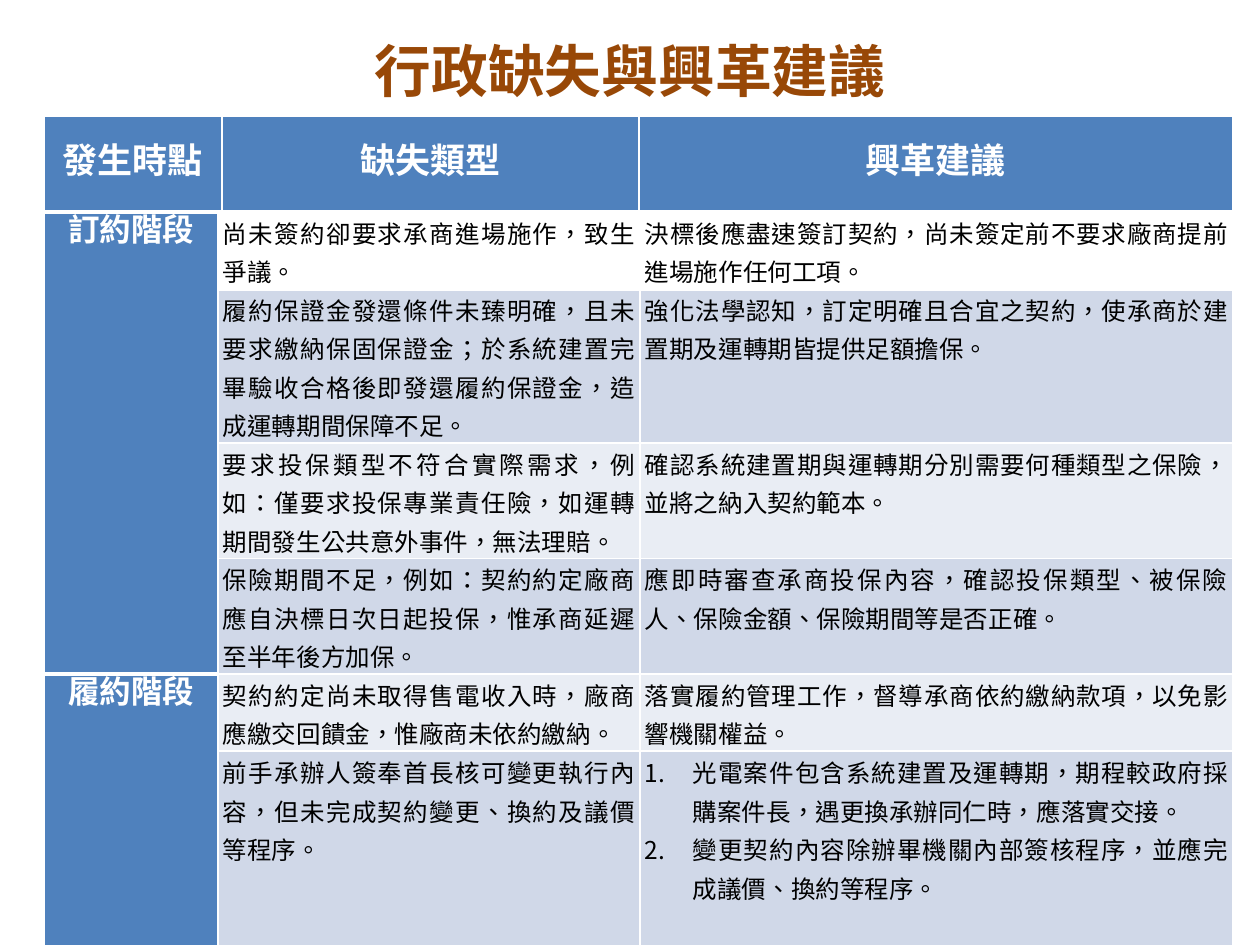
from dataclasses import dataclass

from lxml.etree import SubElement
from pptx import Presentation
from pptx.dml.color import RGBColor
from pptx.enum.text import MSO_ANCHOR, MSO_AUTO_SIZE, PP_ALIGN
from pptx.oxml.ns import qn
from pptx.util import Emu, Inches, Pt


@dataclass(frozen=True)
class Theme:
    font: str = "Noto Sans CJK SC"
    language: str = "zh-TW"
    title_color: str = "984807"
    header_fill: str = "4F81BD"
    white: str = "FFFFFF"
    ink: str = "000000"
    bands: tuple = ("E9EDF4", "D0D8E8")
    title_size: float = 32.4
    header_size: int = 20
    stage_size: int = 18
    body_size: int = 14
    leading: int = 22
    thin: int = 1
    thick: int = 3


def px(length):
    return Emu(round(length * 914400 / 126))


class SlideBuilder:
    def __init__(self, slide, theme):
        self.slide = slide
        self.theme = theme

    def style(self, paragraph, size, color, bold, align):
        paragraph.alignment = align
        # Keep closing punctuation inside the text area
        paragraph._p.get_or_add_pPr().set("hangingPunct", "0")
        for run in paragraph.runs:
            font = run.font
            font.size, font.bold, font.name = Pt(size), bold, self.theme.font
            font.color.rgb = RGBColor.from_string(color)
            font._element.set("lang", self.theme.language)
            SubElement(font._element, qn("a:ea"), typeface=self.theme.font)

    def title(self, text, left, top, width, height, bottom_inset):
        heading = self.slide.shapes.title
        heading.left, heading.top = px(left), px(top)
        heading.width, heading.height = px(width), px(height)
        frame = heading.text_frame
        frame.text = text
        frame.auto_size = MSO_AUTO_SIZE.NONE
        frame.vertical_anchor = MSO_ANCHOR.MIDDLE
        frame.margin_top, frame.margin_bottom = 0, px(bottom_inset)
        self.style(frame.paragraphs[0], self.theme.title_size,
                   self.theme.title_color, True, PP_ALIGN.CENTER)

    def table(self, left, top, columns, rows, height):
        frame = self.slide.shapes.add_table(
            len(rows), len(columns), px(left), px(top), px(sum(columns)), px(height))
        grid = frame.table
        grid.first_row = grid.horz_banding = False
        for column, width in zip(grid.columns, columns):
            column.width = px(width)
        for row, row_height in zip(grid.rows, rows):
            row.height = px(row_height)
        frame.height = px(height)
        return grid

    def borders(self, cell, bottom):
        properties = cell._tc.get_or_add_tcPr()
        thin = self.theme.thin
        for side, width in (("L", thin), ("R", thin), ("T", thin), ("B", bottom)):
            line = SubElement(properties, qn(f"a:ln{side}"), w=str(Pt(width)))
            SubElement(SubElement(line, qn("a:solidFill")), qn("a:srgbClr"),
                       val=self.theme.white)

    def cell(self, cell, text, size, color, fill, bold=False,
             align=PP_ALIGN.JUSTIFY, anchor=MSO_ANCHOR.TOP, inset=5, bottom=1):
        self.borders(cell, bottom)
        cell.fill.solid()
        cell.fill.fore_color.rgb = RGBColor.from_string(fill)
        cell.margin_left = cell.margin_right = px(inset)
        cell.margin_top = cell.margin_bottom = 0
        cell.vertical_anchor = anchor
        cell.text_frame.text = text
        paragraphs = cell.text_frame.paragraphs
        for paragraph in paragraphs:
            if len(paragraphs) > 1:
                self.number(paragraph)
            paragraph.line_spacing = Pt(self.theme.leading)
            self.style(paragraph, size, color, bold, align)

    def number(self, paragraph, indent=48):
        properties = paragraph._p.get_or_add_pPr()
        properties.set("marL", str(px(indent)))
        properties.set("indent", str(-px(indent)))
        SubElement(properties, qn("a:buFont"), typeface=self.theme.font)
        SubElement(properties, qn("a:buAutoNum"), type="arabicPeriod")


HEADERS = ("發生時點", "缺失類型", "興革建議")
# Stage name, then its pairs of deficiency and suggestion
STAGES = (
    ("訂約階段", (
        ("尚未簽約卻要求承商進場施作，致生爭議。",
         "決標後應盡速簽訂契約，尚未簽定前不要求廠商提前進場施作任何工項。"),
        ("履約保證金發還條件未臻明確，且未要求繳納保固保證金；於系統建置完畢驗收合格後即發還履約保證金，造成運轉期間保障不足。",
         "強化法學認知，訂定明確且合宜之契約，使承商於建置期及運轉期皆提供足額擔保。"),
        ("要求投保類型不符合實際需求，例如：僅要求投保專業責任險，如運轉期間發生公共意外事件，無法理賠。",
         "確認系統建置期與運轉期分別需要何種類型之保險，並將之納入契約範本。"),
        ("保險期間不足，例如：契約約定廠商應自決標日次日起投保，惟承商延遲至半年後方加保。",
         "應即時審查承商投保內容，確認投保類型、被保險人、保險金額、保險期間等是否正確。"),
    )),
    ("履約階段", (
        ("契約約定尚未取得售電收入時，廠商應繳交回饋金，惟廠商未依約繳納。",
         "落實履約管理工作，督導承商依約繳納款項，以免影響機關權益。"),
        ("前手承辦人簽奉首長核可變更執行內容，但未完成契約變更、換約及議價等程序。",
         "光電案件包含系統建置及運轉期，期程較政府採購案件長，遇更換承辦同仁時，應落實交接。\n"
         "變更契約內容除辦畢機關內部簽核程序，並應完成議價、換約等程序。"),
    )),
)


def main():
    theme = Theme()
    deck = Presentation()
    deck.slide_width, deck.slide_height = Inches(10), Inches(7.5)
    builder = SlideBuilder(deck.slides.add_slide(deck.slide_layouts[5]), theme)

    # Title
    builder.title("行政缺失與興革建議", 63, 63, 1134, 82, bottom_inset=68)

    # Deficiencies and suggestions, grouped by stage
    findings = builder.table(44, 212, (174, 422, 593), (49, 118, 98, 78, 72, 199), 718)
    row = 0
    for stage, pairs in STAGES:
        stage_cell = findings.cell(row, 0)
        stage_cell.merge(findings.cell(row + len(pairs) - 1, 0))
        builder.cell(stage_cell, stage, theme.stage_size, theme.white, theme.header_fill,
                     bold=True, align=PP_ALIGN.CENTER,
                     bottom=theme.thin if row else theme.thick)
        for pair in pairs:
            fill = theme.bands[row % 2] if row else theme.white
            bottom = theme.thin if row else theme.thick
            for column, text in enumerate(pair, start=1):
                builder.cell(findings.cell(row, column), text, theme.body_size,
                             theme.ink, fill, bottom=bottom)
            row += 1

    # Column headings
    headings = builder.table(44, 116, (178, 417, 594), (96,), 96)
    for column, text in enumerate(HEADERS):
        builder.cell(headings.cell(0, column), text, theme.header_size, theme.white,
                     theme.header_fill, bold=True, align=PP_ALIGN.CENTER,
                     anchor=MSO_ANCHOR.MIDDLE, inset=3, bottom=theme.thick)

    deck.save("out.pptx")


if __name__ == "__main__":
    main()
